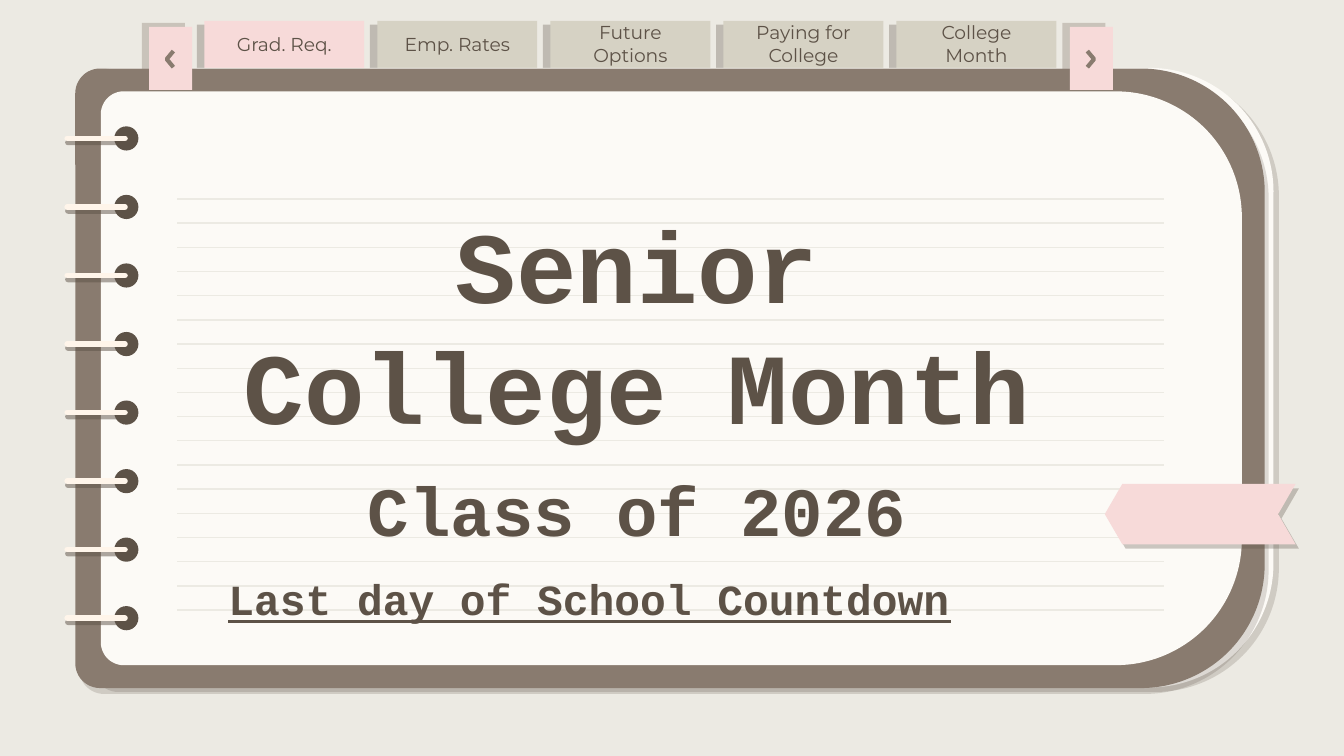
"""Build the notebook-style cover slide for Senior College Month."""
from lxml import etree
from pptx import Presentation
from pptx.dml.color import RGBColor
from pptx.enum import shapes as es, text as et
from pptx.oxml.ns import qn
from pptx.util import Inches, Pt

SAND = RGBColor(0xEC, 0xEA, 0xE3)
PINK = RGBColor(0xF7, 0xDA, 0xD9)
SAGE = RGBColor(0xD6, 0xD2, 0xC4)
PAPER = RGBColor(0xFC, 0xFA, 0xF6)
TAUPE = RGBColor(0x89, 0x7B, 0x6F)
BROWN = RGBColor(0x5D, 0x52, 0x47)
CREAM = RGBColor(0xFF, 0xF5, 0xEA)

SHAPE = es.MSO_SHAPE
TABS = ["Grad. Req.", "Emp. Rates", "Future Options", "Paying for College", "College Month"]
TAB_SHADE = (BROWN, 31, 4.5, 152)
NAV_SHADE = (TAUPE, 35, 4.5, 209)
RING_SHADE = (BROWN, 50, 2.2, 80)


def shade(item, cast=None):
    """Set the shadow from (color, alpha, distance, angle), or none."""
    props = item._element.spPr
    for old in props.findall(qn("a:effectLst")):
        props.remove(old)
    effects = etree.SubElement(props, qn("a:effectLst"))
    if cast:
        color, alpha, dist, angle = cast
        outer = etree.SubElement(effects, qn("a:outerShdw"), blurRad="0", dist=str(Pt(dist)),
                                 dir=str(angle * 60000), algn="bl", rotWithShape="0")
        tone = etree.SubElement(outer, qn("a:srgbClr"), val=str(color))
        etree.SubElement(tone, qn("a:alpha"), val=str(alpha * 1000))


def block(slide, kind, box, fill, cast=None, adjust=(), turn=0):
    """Add a filled preset shape."""
    item = slide.shapes.add_shape(kind, *map(Inches, box))
    for i, value in enumerate(adjust):
        item.adjustments[i] = value
    item.rotation = turn
    item.fill.solid()
    item.fill.fore_color.rgb = fill
    item.line.fill.background()
    shade(item, cast)


def rule(slide, left, right, y, color, width, cast=None):
    """Add a horizontal line."""
    line = slide.shapes.add_connector(es.MSO_CONNECTOR.STRAIGHT, Inches(left), Inches(y),
                                      Inches(right), Inches(y))
    line.line.color.rgb = color
    line.line.width = Pt(width)
    shade(line, cast)
    return line


def label(slide, box, inset):
    """Add a wrapping text box and return its frame."""
    frame = slide.shapes.add_textbox(*map(Inches, box)).text_frame
    frame.word_wrap = True
    frame.margin_left = frame.margin_right = Inches(0.1)
    frame.margin_top = frame.margin_bottom = Inches(inset)
    return frame


def write(para, words, size, face, align):
    """Fill a paragraph with styled text."""
    para.text = words
    para.alignment = align
    para.font.size = Pt(size)
    para.font.name = face
    para.font.color.rgb = BROWN


def tab(slide, i, words):
    """Add one labelled tab, the first one being active."""
    left = 1.52 + 1.2875 * i
    block(slide, SHAPE.RECTANGLE, (left, 0.155, 1.19, 0.37), SAGE if i else PINK, TAB_SHADE)
    frame = label(slide, (left, 0.14, 1.19, 0.37), 0)
    frame.vertical_anchor = et.MSO_ANCHOR.MIDDLE
    write(frame.paragraphs[0], words, 10, "Montserrat", et.PP_ALIGN.CENTER)


def cover(slide, box, fill, adjust, cast=None):
    """Add one layer of the notebook, rounder on its right side."""
    block(slide, SHAPE.ROUND_2_SAME_RECTANGLE, box, fill, cast, adjust, 90)


def ring(slide, y):
    """Add one binding ring with its hole."""
    block(slide, SHAPE.OVAL, (0.85, y - 0.09, 0.18, 0.18), BROWN)
    wire = rule(slide, 0.5, 0.93, y, CREAM, 3, RING_SHADE)
    wire.line._get_or_add_ln().set("cap", "rnd")


def nav(slide, left, back, front):
    """Add a page arrow whose tip is at front."""
    block(slide, SHAPE.RECTANGLE, (left, 0.2, 0.32, 0.47), PINK, NAV_SHADE)
    pen = slide.shapes.build_freeform(Inches(back), Inches(0.38), scale=1.0)
    pen.add_line_segments([(Inches(front), Inches(0.44)), (Inches(back), Inches(0.5))], close=False)
    mark = pen.convert_to_shape()
    mark.fill.background()
    mark.line.color.rgb = TAUPE
    mark.line.width = Pt(2.25)
    shade(mark)


def title(slide):
    """Add the title text on the ruled page."""
    frame = label(slide, (1.6, 1.41, 6.28, 3.4), 0.1)
    rows = [("Senior College Month", 54, 0, et.PP_ALIGN.CENTER),
            ("Class of 2026", 37, 12, et.PP_ALIGN.CENTER),
            ("Last day of School Countdown", 23, 12, et.PP_ALIGN.LEFT)]
    for i, (words, size, gap, align) in enumerate(rows):
        para = frame.add_paragraph() if i else frame.paragraphs[0]
        write(para, words, size, "Courier New", align)
        para.font.bold = True
        para.space_before = Pt(gap)
    para.font.underline = True


def main():
    """Build and save the slide."""
    deck = Presentation()
    deck.slide_width, deck.slide_height = Inches(10), Inches(5.625)
    slide = deck.slides.add_slide(deck.slide_layouts[6])
    slide.background.fill.solid()
    slide.background.fill.fore_color.rgb = SAND
    for i, words in enumerate(TABS):
        tab(slide, i, words)
    cover(slide, (2.76, -1.6, 4.61, 8.82), PAPER, (0.2, 0.04), (BROWN, 20, 3.8, 40))
    cover(slide, (2.68, -1.61, 4.61, 8.85), TAUPE, (0.2, 0.04), (BROWN, 20, 3.8, 56))
    cover(slide, (2.86, -1.43, 4.27, 8.49), PAPER, (0.22, 0.04))
    for i in range(8):
        ring(slide, 1.03 + 0.51 * i)
    for i in range(18):
        rule(slide, 1.32, 8.66, 1.48 + 0.18 * i, SAND, 0.75)
    title(slide)
    block(slide, SHAPE.CHEVRON, (8.22, 3.6, 1.42, 0.45), PINK, (BROWN, 31, 3, 53), (0.29,), 180)
    nav(slide, 7.96, 8.09, 8.14)
    nav(slide, 1.11, 1.29, 1.24)
    deck.save("out.pptx")


if __name__ == "__main__":
    main()
